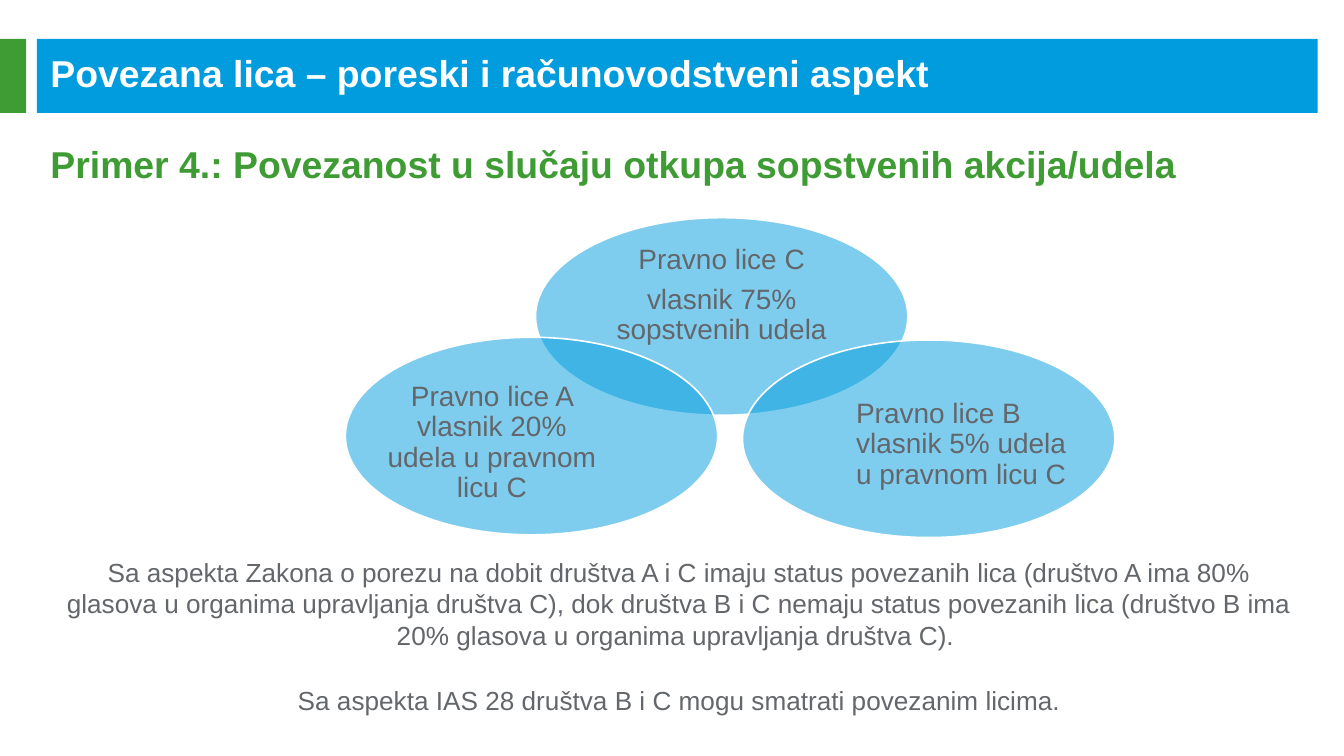
from dataclasses import dataclass

from lxml.etree import SubElement
from pptx import Presentation
from pptx.dml.color import RGBColor
from pptx.enum.shapes import MSO_SHAPE
from pptx.enum.text import MSO_ANCHOR, MSO_AUTO_SIZE, PP_ALIGN
from pptx.oxml.ns import qn
from pptx.util import Emu, Pt

EMU_PER_PX = 4572  # 200 px to the inch
COLORS = {"blue": "009CDE", "green": "3F9C35", "gray": "63666A", "white": "FFFFFF"}
FONT = "Arial"
ELLIPSE_WIDTH, ELLIPSE_HEIGHT = 554, 294


@dataclass(frozen=True)
class Box:
    left: int
    top: int
    width: int
    height: int

    def emu(self) -> tuple:
        return tuple(px(value) for value in (self.left, self.top, self.width, self.height))


@dataclass(frozen=True)
class Entity:
    left: int
    top: int
    label: Box
    lines: tuple
    align: PP_ALIGN = PP_ALIGN.CENTER


def px(value: int) -> Emu:
    return Emu(value * EMU_PER_PX)


def rgb(name: str) -> RGBColor:
    return RGBColor.from_string(COLORS[name])


def write(shape, lines: tuple, size: int, color: str, bold: bool = False,
          align: PP_ALIGN = PP_ALIGN.LEFT) -> None:
    text_frame = shape.text_frame
    text_frame.word_wrap = True
    text_frame.auto_size = MSO_AUTO_SIZE.NONE
    text_frame.text = "\n".join(lines)
    for paragraph in text_frame.paragraphs:
        paragraph.alignment = align
        paragraph.space_before = Pt(0)
        for run in paragraph.runs:
            run.font.name = FONT
            run.font.size = Pt(size)
            run.font.bold = bold
            run.font.color.rgb = rgb(color)


def write_placeholder(shape, box: Box, text: str, color: str, anchor: MSO_ANCHOR) -> None:
    shape.left, shape.top, shape.width, shape.height = box.emu()
    write(shape, (text,), 20, color, bold=True)
    shape.text_frame.vertical_anchor = anchor
    properties = shape.text_frame.paragraphs[0]._p.get_or_add_pPr()
    properties.set("marL", "0")
    properties.set("indent", "0")
    SubElement(properties, qn("a:buNone"))


def add_filled(slide, kind: MSO_SHAPE, box: Box, color: str):
    shape = slide.shapes.add_shape(kind, *box.emu())
    shape.shadow.inherit = False
    shape.fill.solid()
    shape.fill.fore_color.rgb = rgb(color)
    shape.line.fill.background()
    return shape


def add_entity(slide, entity: Entity) -> None:
    box = Box(entity.left, entity.top, ELLIPSE_WIDTH, ELLIPSE_HEIGHT)
    ellipse = add_filled(slide, MSO_SHAPE.OVAL, box, "blue")
    ellipse.line.color.rgb = rgb("white")
    ellipse.line.width = Pt(0.85)
    # Half-transparent fill lets the overlaps show
    fill_color = ellipse.element.spPr.find(qn("a:solidFill")).find(qn("a:srgbClr"))
    SubElement(fill_color, qn("a:alpha")).set("val", "50000")

    label = slide.shapes.add_textbox(*entity.label.emu())
    write(label, entity.lines, 15, "gray", align=entity.align)
    text_frame = label.text_frame
    text_frame.vertical_anchor = MSO_ANCHOR.MIDDLE
    text_frame.margin_left = text_frame.margin_right = 0
    text_frame.margin_top = text_frame.margin_bottom = 0
    for paragraph in text_frame.paragraphs:
        paragraph.line_spacing = 0.9
        paragraph.space_after = Pt(5.25)


ENTITIES = (
    Entity(797, 324, Box(871, 374, 406, 132),
           ("Pravno lice C", "vlasnik 75% sopstvenih udela")),
    Entity(1105, 506, Box(1274, 581, 332, 162),
           ("Pravno lice B vlasnik 5% udela u pravnom licu C",), PP_ALIGN.LEFT),
    Entity(514, 502, Box(566, 578, 332, 162),
           ("Pravno lice A vlasnik 20% udela u pravnom licu C",)),
)
CONCLUSIONS = (
    "Sa aspekta Zakona o porezu na dobit društva A i C imaju status povezanih lica "
    "(društvo A ima 80% glasova u organima upravljanja društva C), dok društva B i C "
    "nemaju status povezanih lica (društvo B ima 20% glasova u organima upravljanja "
    "društva C). ",
    "Sa aspekta IAS 28 društva B i C mogu smatrati povezanim licima.",
)


def main() -> None:
    presentation = Presentation()
    presentation.slide_width, presentation.slide_height = px(2000), px(1125)
    slide = presentation.slides.add_slide(presentation.slide_layouts[1])
    title, subtitle = slide.placeholders

    # Header bars, placed behind the title
    for box, color in ((Box(55, 58, 1906, 110), "blue"), (Box(0, 58, 39, 110), "green")):
        bar = add_filled(slide, MSO_SHAPE.RECTANGLE, box, color)
        title.element.addprevious(bar.element)

    # Title and example heading
    write_placeholder(title, Box(55, 78, 1890, 60),
                      "Povezana lica – poreski i računovodstveni aspekt",
                      "white", MSO_ANCHOR.MIDDLE)
    write_placeholder(subtitle, Box(55, 200, 1906, 106),
                      "Primer 4.: Povezanost u slučaju otkupa sopstvenih akcija/udela",
                      "green", MSO_ANCHOR.TOP)

    # Conclusions
    conclusions = slide.shapes.add_textbox(*Box(78, 818, 1866, 260).emu())
    write(conclusions, CONCLUSIONS, 14, "gray", align=PP_ALIGN.CENTER)
    for paragraph, gap in zip(conclusions.text_frame.paragraphs, (18, 6)):
        paragraph.space_after = Pt(gap)

    # Overlapping ellipses
    for entity in ENTITIES:
        add_entity(slide, entity)

    presentation.save("out.pptx")


if __name__ == "__main__":
    main()
